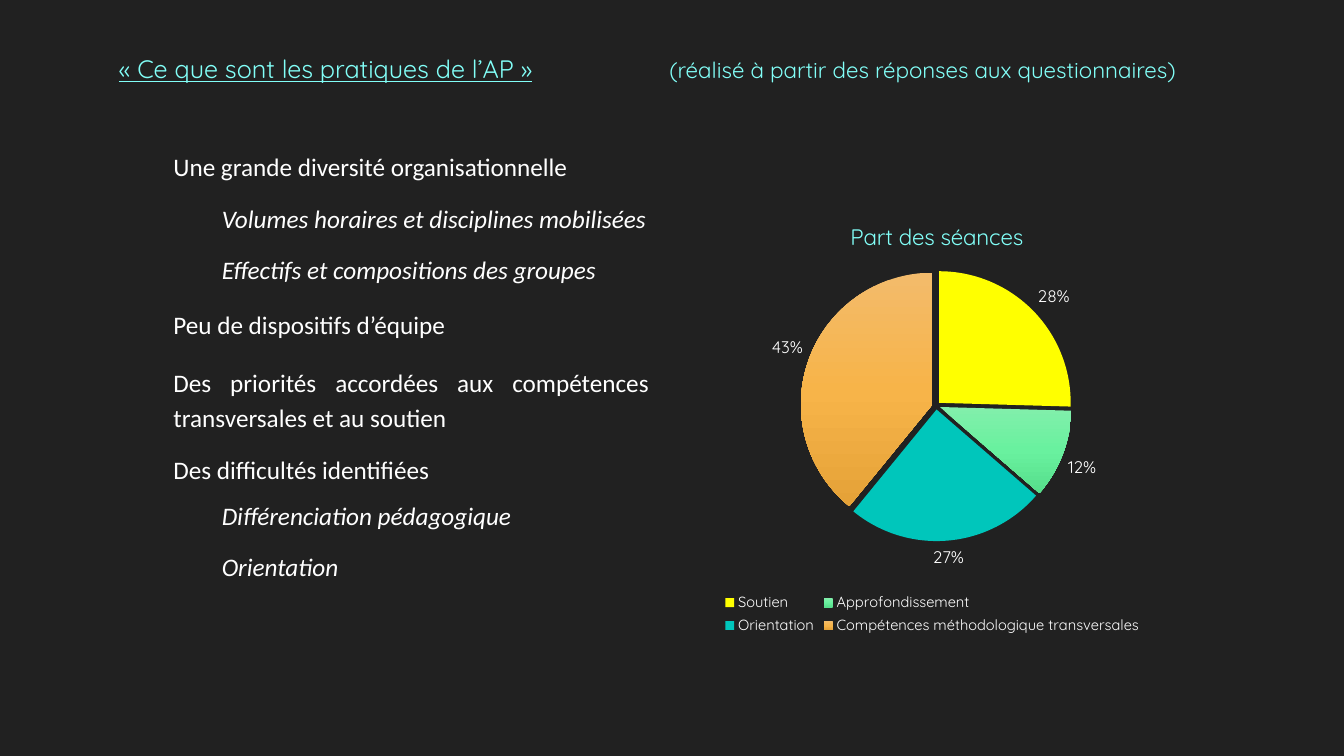
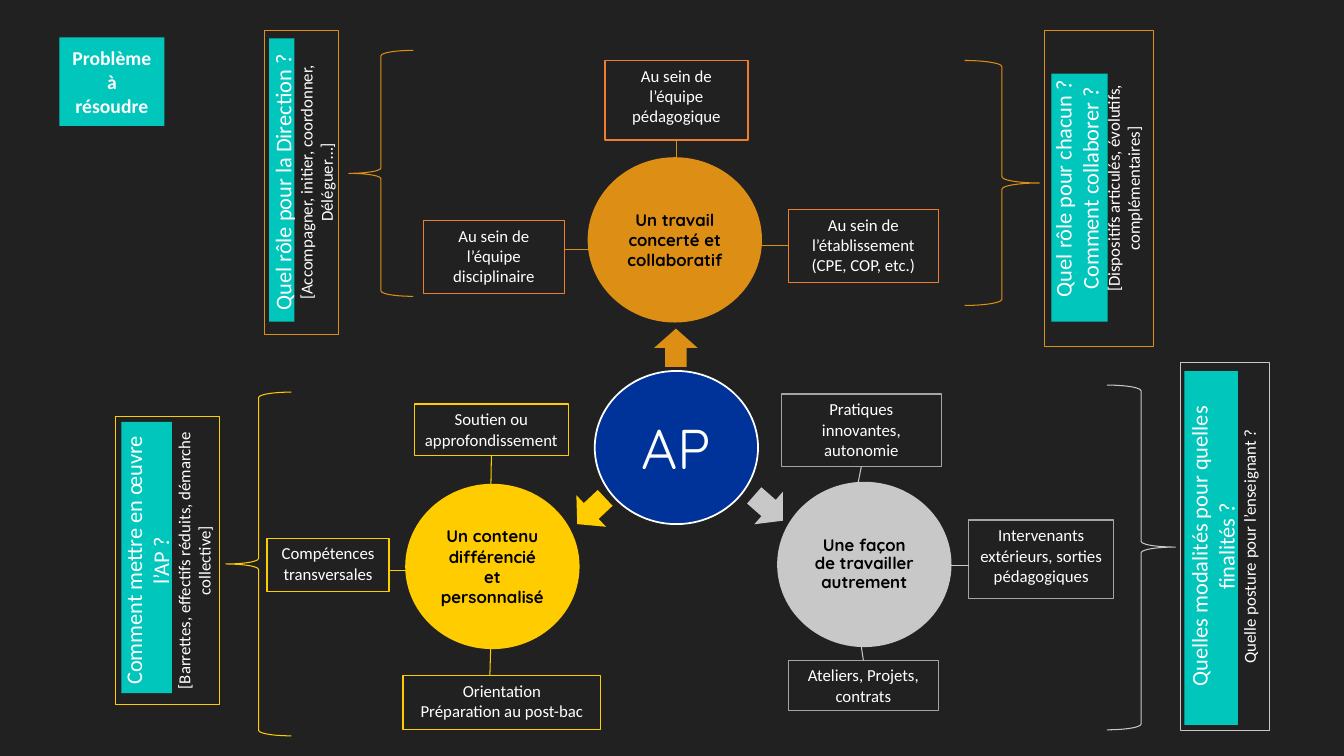
from copy import deepcopy

from lxml import etree
from pptx import Presentation
from pptx.chart.data import CategoryChartData
from pptx.dml.color import RGBColor
from pptx.enum.chart import XL_CHART_TYPE, XL_LABEL_POSITION, XL_LEGEND_POSITION
from pptx.enum.shapes import MSO_CONNECTOR, MSO_SHAPE
from pptx.enum.text import MSO_ANCHOR, MSO_AUTO_SIZE, PP_ALIGN
from pptx.oxml.ns import qn
from pptx.util import Inches, Pt

RECTANGLE, ELLIPSE, ARROW = MSO_SHAPE.RECTANGLE, MSO_SHAPE.OVAL, MSO_SHAPE.DOWN_ARROW
LEFT_BRACE, RIGHT_BRACE = MSO_SHAPE.LEFT_BRACE, MSO_SHAPE.RIGHT_BRACE
STRAIGHT = MSO_CONNECTOR.STRAIGHT
PIE, OUTSIDE, BELOW = XL_CHART_TYPE.PIE, XL_LABEL_POSITION.OUTSIDE_END, XL_LEGEND_POSITION.BOTTOM
LEFT, CENTER, JUSTIFY = PP_ALIGN.LEFT, PP_ALIGN.CENTER, PP_ALIGN.JUSTIFY
TOP, MIDDLE, FIXED = MSO_ANCHOR.TOP, MSO_ANCHOR.MIDDLE, MSO_AUTO_SIZE.NONE

# Shared look; the grid has ten cells to the inch
CELL = Inches(0.1)
BODY_FONT, DISPLAY_FONT = "Calibri", "Quicksand"
DARK, WHITE, BLACK = "212121", "FFFFFF", "000000"
AQUA, TEAL, BLUE = "82FFF8", "00C6BB", "003399"
AMBER, YELLOW, SILVER = "DC8F14", "FFCC00", "C8C8C8"
ORANGE, GREY = "ED7D31", "A5A5A5"
TOP_SIDE, LEFT_SIDE, BOTTOM_SIDE = 0, 1, 2
rgb = RGBColor.from_string


def cells(*lengths):
    return [round(length * CELL) for length in lengths]


def add_block(page, kind, area, fill=None, line=None, weight=1, turn=0, text=(),
              font=BODY_FONT, color=WHITE, bold=None, anchor=TOP):
    """Add a flat shape; text is a list of (wording, size) paragraphs."""
    block = page.shapes.add_shape(kind, *cells(*area))
    block.shadow.inherit = False
    block.element.remove(block.element.find(qn("p:style")))
    block.rotation = turn
    if fill:
        block.fill.solid()
        block.fill.fore_color.rgb = rgb(fill)
    else:
        block.fill.background()
    if line:
        block.line.color.rgb = rgb(line)
        block.line.width = Pt(weight)
    else:
        block.line.fill.background()
    frame = block.text_frame
    frame.word_wrap, frame.vertical_anchor = True, anchor
    for number, (wording, size) in enumerate(text):
        para = frame.add_paragraph() if number else frame.paragraphs[0]
        para.text, para.alignment = wording, CENTER
        para.font.name, para.font.size, para.font.bold = font, Pt(size), bold
        para.font.color.rgb = rgb(color)
    return block


deck = Presentation()
deck.slide_width, deck.slide_height = cells(133.33, 75)
backdrop = deck.slide_master.background.fill
backdrop.solid()
backdrop.fore_color.rgb = rgb(DARK)

# Both pages, with their title and body placeholders in place
practice = deck.slides.add_slide(deck.slide_layouts[1])
problem = deck.slides.add_slide(deck.slide_layouts[5])
practice_title, practice_list = practice.placeholders
problem_title = problem.shapes.title
for holder, area, anchor in [
    (practice_title, (10.8, 4.8, 117.3, 4), TOP),
    (practice_list, (16.2, 14.1, 49.2, 44.3), TOP),
    (problem_title, (5.9, 3.7, 10.4, 8.8), MIDDLE),
]:
    holder.left, holder.top, holder.width, holder.height = cells(*area)
    holder.text_frame.auto_size = FIXED
    holder.text_frame.vertical_anchor = anchor

# Page 1: title, its second part set at a tab stop
para = practice_title.text_frame.paragraphs[0]
para.alignment = LEFT
tabs = etree.SubElement(para._p.get_or_add_pPr(), qn("a:tabLst"))
etree.SubElement(tabs, qn("a:tab"), pos=str(cells(54.6)[0]), algn="l")
para.font.name, para.font.color.rgb = DISPLAY_FONT, rgb(AQUA)
for wording, size, underlined in [
    ("« Ce que sont les pratiques de l’AP »", 18, True),
    ("\t", 18, False),
    ("(réalisé à partir des réponses aux questionnaires)", 16, False),
]:
    span = para.add_run()
    span.text = wording
    span.font.size, span.font.underline = Pt(size), underlined

# Page 1: list as (wording, is detail, space before)
frame = practice_list.text_frame
for number, (wording, detail, gap) in enumerate([
    ("Une grande diversité organisationnelle", False, 0),
    ("Volumes horaires et disciplines mobilisées", True, 12),
    ("Effectifs et compositions des groupes", True, 12),
    ("Peu de dispositifs d’équipe", False, 14),
    ("Des priorités accordées aux compétences transversales et au soutien", False, 17),
    ("Des difficultés identifiées", False, 12),
    ("Différenciation pédagogique", True, 8),
    ("Orientation", True, 12),
]):
    para = frame.add_paragraph() if number else frame.paragraphs[0]
    para.text = wording
    properties = para._p.get_or_add_pPr()
    properties.set("marL", str(cells(4.8 if detail else 0)[0]))
    properties.set("indent", "0")
    etree.SubElement(properties, qn("a:buNone"))
    para.alignment, para.line_spacing = JUSTIFY, 1.15
    para.space_before, para.space_after = Pt(gap), Pt(0)
    para.font.name, para.font.size, para.font.italic = BODY_FONT, Pt(18), detail
    para.font.color.rgb = rgb(WHITE)

# Page 1: pie chart
slices = [
    ("Soutien", 0.28, ["FFFF00"]),
    ("Approfondissement", 0.12, ["82EFAB", "69F19F", "56DE8B"]),
    ("Orientation", 0.27, [TEAL]),
    ("Compétences méthodologique transversales", 0.43, ["F3BB6B", "F7B449", "E5A238"]),
]
data = CategoryChartData(number_format="0%")
data.categories = [name for name, _, _ in slices]
data.add_series("Part des séances", [share for _, share, _ in slices])
chart = practice.shapes.add_chart(PIE, *cells(53.7, 19.3, 77.6, 44.1), data).chart
chart.font.name, chart.font.size = DISPLAY_FONT, Pt(10)
chart.font.color.rgb = rgb(WHITE)

chart.has_title = True
para = chart.chart_title.text_frame.paragraphs[0]
para.text = "Part des séances"
para.font.name, para.font.size, para.font.bold = DISPLAY_FONT, Pt(16), False
para.font.color.rgb = rgb(AQUA)

chart.has_legend = True
chart.legend.position, chart.legend.include_in_layout = BELOW, False
chart.legend.font.name, chart.legend.font.size = DISPLAY_FONT, Pt(10.5)
chart.legend.font.color.rgb = rgb(WHITE)

plot = chart.plots[0]
plot.vary_by_categories = True
plot.has_data_labels = True
labels = plot.data_labels
labels.show_value, labels.show_percentage, labels.position = True, False, OUTSIDE
labels.number_format, labels.number_format_is_linked = "0%", False
labels.font.name, labels.font.size = DISPLAY_FONT, Pt(12)
labels.font.color.rgb = rgb(WHITE)

series = plot.series[0]
explosion = etree.Element(qn("c:explosion"), val="3")
series._element.find(qn("c:tx")).addnext(explosion)
for number, (_, _, colors) in enumerate(slices):
    fill = series.points[number].format.fill
    if len(colors) == 1:
        fill.solid()
        fill.fore_color.rgb = rgb(colors[0])
        continue
    fill.gradient()
    fill.gradient_angle = 270
    first = fill.gradient_stops[0]._gs
    first.addnext(deepcopy(first))
    for step, (stop, color) in enumerate(zip(fill.gradient_stops, colors)):
        stop.position, stop.color.rgb = step / 2, rgb(color)

# Places of the chart title and the pie, as shares of the chart
chart_body = chart._chartSpace.find(qn("c:chart"))
for part, index, places in [
    ("c:title", 1, {"xMode": "edge", "yMode": "edge", "x": 0.39, "y": 0.05}),
    ("c:plotArea", 0, {"layoutTarget": "inner", "xMode": "edge", "yMode": "edge",
                       "x": 0.33, "y": 0.17, "w": 0.35, "h": 0.61}),
]:
    parent = chart_body.find(qn(part))
    for old in parent.findall(qn("c:layout")):
        parent.remove(old)
    layout = etree.Element(qn("c:layout"))
    manual = etree.SubElement(layout, qn("c:manualLayout"))
    for name, value in places.items():
        etree.SubElement(manual, qn("c:" + name), val=str(value))
    parent.insert(index, layout)

# Page 2: title
problem_title.fill.solid()
problem_title.fill.fore_color.rgb = rgb(TEAL)
para = problem_title.text_frame.paragraphs[0]
para.text, para.alignment = "Problème à résoudre", CENTER
para.font.name, para.font.size, para.font.bold = BODY_FONT, Pt(14), True
para.font.color.rgb = rgb(WHITE)

# Page 2: upright question panels as (teal bar, frame, colour, headings, detail)
for bar, area, color, headings, detail in [
    ((13.9, 16.6, 28.1, 2.5), (14.8, 14.4, 30.2, 7.4), AMBER,
     ["Quel rôle pour la Direction ?"],
     "[Accompagner, initier, coordonner, Déléguer…]"),
    ((94.8, 16.8, 24.6, 5.6), (93.3, 13.3, 31.4, 10.8), AMBER,
     ["Quel rôle pour chacun ?", "Comment collaborer ?"],
     "[Dispositifs articulés, évolutifs, complémentaires]"),
    ((1.1, 52.8, 26.9, 5), (2.3, 50.4, 28.6, 10.4), YELLOW,
     ["Comment mettre en œuvre l’AP ?"],
     "[Barrettes, effectifs réduits, démarche collective]"),
    ((102.6, 51.7, 35.1, 5.3), (103.2, 49.8, 36.6, 8.8), SILVER,
     ["Quelles modalités pour quelles finalités ?"],
     "Quelle posture pour l’enseignant ?"),
]:
    add_block(problem, RECTANGLE, bar, fill=TEAL, turn=270)
    add_block(problem, RECTANGLE, area, line=color, weight=0.5, turn=270,
              text=[(heading, 16) for heading in headings] + [(detail, 12)])

# Page 2: braces between panels and themes
for kind, area, color, turn in [
    (LEFT_BRACE, (34.6, 5, 6.4, 24.4), AMBER, 0),
    (LEFT_BRACE, (95.7, 6, 7.4, 24.3), AMBER, 180),
    (LEFT_BRACE, (22.4, 38.9, 6.5, 34.1), YELLOW, 0),
    (RIGHT_BRACE, (109.8, 38.2, 6.8, 34.2), SILVER, 0),
]:
    brace = add_block(problem, kind, area, line=color, weight=0.75, turn=turn)
    if kind == RIGHT_BRACE:
        brace.adjustments[1] = 0.47

# Page 2: themes as (circle corner, wording, colour, box outline, arrow, branches);
# a branch is (box, paragraphs, link from circle to box, joined side of the box)
themes = [
    ((58.3, 15.6), "Un travail concerté et collaboratif", AMBER, ORANGE, (64.9, 32.6, 180), [
        ((60, 6, 14.2, 7.9), ["Au sein de l’équipe pédagogique"],
         (67.1, 16.9, 67.1, 13.9), BOTTOM_SIDE),
        ((42, 21.9, 14, 7.2), ["Au sein de l’équipe disciplinaire"],
         (59.7, 24.8, 56, 24.8), None),
        ((78.2, 20.8, 14.9, 7.2), ["Au sein de l’établissement (CPE, COP, etc.)"],
         (74.4, 24.4, 78.2, 24.4), LEFT_SIDE)]),
    ((40.2, 48), "Un contenu différencié et personnalisé", YELLOW, YELLOW, (56.5, 48.8, 46.8), [
        ((41.1, 40.1, 15.3, 5.1), ["Soutien ou approfondissement"],
         (48.7, 48.4, 48.7, 45.2), BOTTOM_SIDE),
        ((26.5, 53.4, 12.1, 5.3), ["Compétences transversales"],
         (41.5, 56.6, 38.6, 56.6), None),
        ((40, 67, 19.6, 5.4), ["Orientation", "Préparation au post-bac"],
         (48.7, 63.5, 48.6, 67), None)]),
    ((77.1, 47.8), "Une façon de travailler autrement", SILVER, GREY, (74.1, 48.5, 311.3), [
        ((77.5, 39.1, 15.9, 7.2), ["Pratiques innovantes, autonomie"],
         (85, 48.5, 85.4, 46.3), BOTTOM_SIDE),
        ((96.1, 51.6, 14.4, 7.8), ["Intervenants extérieurs, sorties pédagogiques"],
         (92.5, 56.1, 96.1, 56.1), None),
        ((78.2, 65.5, 14.9, 5), ["Ateliers, Projets, contrats"],
         (85.3, 63.2, 85.6, 65.5), TOP_SIDE)]),
]
for corner, wording, color, outline, (left, top, turn), branches in themes:
    for area, wordings, ends, side in branches:
        box = add_block(problem, RECTANGLE, area, line=outline,
                        text=[(part, 12) for part in wordings])
        link = problem.shapes.add_connector(STRAIGHT, *cells(*ends))
        link.element.remove(link.element.find(qn("p:style")))
        link.line.color.rgb, link.line.width = rgb(color), Pt(0.75)
        etree.SubElement(link.element.spPr, qn("a:effectLst"))
        if side is not None:
            link.end_connect(box, side)
    circle = add_block(problem, ELLIPSE, (*corner, 17.3, 16.4), fill=color, text=[(wording, 12)],
                       font=DISPLAY_FONT, color=BLACK, bold=True, anchor=MIDDLE)
    if color == SILVER:
        circle.text_frame.paragraphs[0].line_spacing = 0.9
    add_block(problem, ARROW, (left, top, 4.3, 3.8), fill=color, turn=turn)

# Page 2: hub
add_block(problem, ELLIPSE, (59, 36.8, 16.2, 15.2), fill=BLUE, line=WHITE, weight=1.25,
          text=[("AP", 40)], font=DISPLAY_FONT, anchor=MIDDLE)

deck.save("out.pptx")
